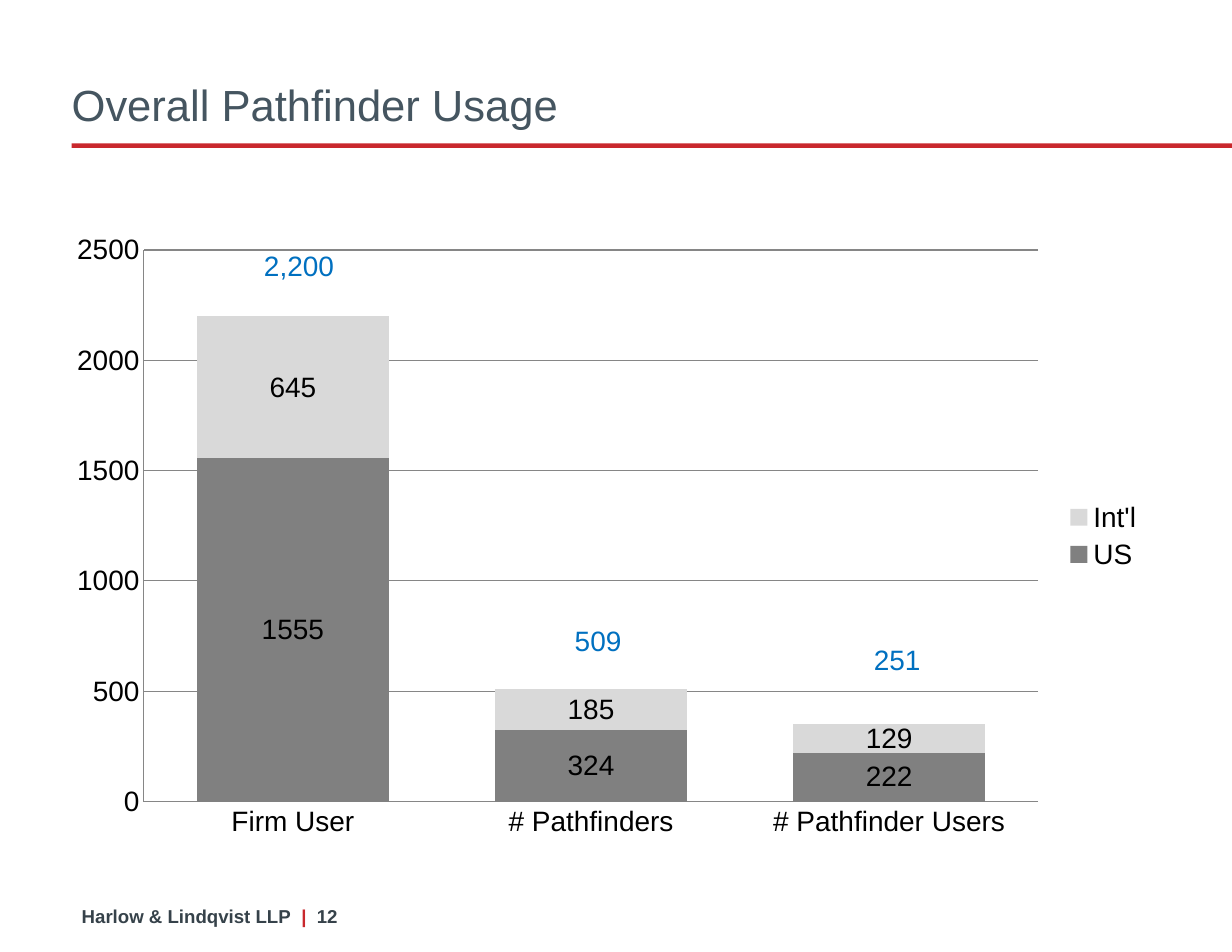
import pptx
import pptx.chart.data
import pptx.dml.color
import pptx.enum.chart
import pptx.enum.shapes
import pptx.enum.text
import pptx.util
from lxml import etree

# Content
TITLE = "Overall Pathfinder Usage"
FOOTER = [("Harlow & Lindqvist LLP  ", "footer"), ("|  ", "accent"), ("12", "footer")]
CATEGORIES = ["Firm User", "# Pathfinders", "# Pathfinder Users"]
SERIES = [("US", (1555, 324, 222), "us"), ("Int'l", (645, 185, 129), "intl")]
TOTALS = [("2,200", 2.17), ("509", 5.52), ("251", 5.69)]  # label, top

# Theme and grid
THEME = {
    "font": "Arial",
    "title": "455560", "footer": "36424A", "accent": "C9282D",
    "text": "000000", "total": "0070C0", "axis": "868686",
    "us": "808080", "intl": "D9D9D9",
    "title_size": 28, "chart_size": 18, "footer_size": 12,
}
WIDTH, HEIGHT = 11, 8.5
MARGIN = 0.64
CHART = (0.5, 1.98, 9.81, 5.61)
PLOT_SHARE = {"x": 0.08, "y": 0.045, "w": 0.814, "h": 0.878}
FIRST_COLUMN, COLUMN_PITCH = 2.67, 2.67
TOTAL_WIDTH, TOTAL_HEIGHT = 1.67, 0.34


def colour(key):
    return pptx.dml.color.RGBColor.from_string(THEME[key])


def inches(box):
    return [pptx.util.Inches(length) for length in box]


def style(font, size, key, bold=False):
    font.name = THEME["font"]
    font.size = pptx.util.Pt(THEME[size])
    font.color.rgb = colour(key)
    font.bold = bold


def add_text(slide, box, runs, size, bold=False, insets=(0.1, 0.05, 0.1, 0.05),
             align=pptx.enum.text.PP_ALIGN.LEFT,
             anchor=pptx.enum.text.MSO_ANCHOR.TOP):
    frame = slide.shapes.add_textbox(*inches(box)).text_frame
    frame.word_wrap = True
    frame.vertical_anchor = anchor
    (frame.margin_left, frame.margin_top,
     frame.margin_right, frame.margin_bottom) = inches(insets)
    paragraph = frame.paragraphs[0]
    paragraph.alignment = align
    for words, key in runs:
        run = paragraph.add_run()
        run.text = words
        style(run.font, size, key, bold)


def place_plot(chart):
    """Fix the inner plot area as shares of the chart frame."""
    plot_area = chart.plots[0]._element.getparent()
    namespace = etree.QName(plot_area).namespace
    tag = "{%s}" % namespace
    for old in plot_area.findall(tag + "layout"):
        plot_area.remove(old)
    layout = etree.Element(tag + "layout")
    manual = etree.SubElement(layout, tag + "manualLayout")
    settings = {"layoutTarget": "inner", "xMode": "edge", "yMode": "edge", **PLOT_SHARE}
    for name, value in settings.items():
        etree.SubElement(manual, tag + name, val=str(value))
    plot_area.insert(0, layout)


def add_usage_chart(slide):
    data = pptx.chart.data.CategoryChartData()
    data.categories = CATEGORIES
    for name, values, _ in SERIES:
        data.add_series(name, values)
    chart = slide.shapes.add_chart(
        pptx.enum.chart.XL_CHART_TYPE.COLUMN_STACKED, *inches(CHART), data).chart
    style(chart.font, "chart_size", "text")
    chart.has_title = False
    chart.has_legend = True
    chart.legend.position = pptx.enum.chart.XL_LEGEND_POSITION.RIGHT
    chart.legend.include_in_layout = False

    # Axes
    value_axis, category_axis = chart.value_axis, chart.category_axis
    value_axis.minimum_scale, value_axis.maximum_scale = 0, 2500
    value_axis.major_unit = 500
    value_axis.has_major_gridlines = True
    for axis in (value_axis, category_axis):
        axis.major_tick_mark = pptx.enum.chart.XL_TICK_MARK.NONE
    for part in (value_axis, category_axis, value_axis.major_gridlines):
        part.format.line.color.rgb = colour("axis")
        part.format.line.width = pptx.util.Pt(0.75)

    # Stacked columns
    plot = chart.plots[0]
    plot.gap_width, plot.overlap = 55, 100
    plot.vary_by_categories = False
    for series, (_, _, key) in zip(plot.series, SERIES):
        series.format.fill.solid()
        series.format.fill.fore_color.rgb = colour(key)
        labels = series.data_labels
        labels.show_value = True
        labels.position = pptx.enum.chart.XL_LABEL_POSITION.CENTER
        style(labels.font, "chart_size", "text")
    place_plot(chart)


def main():
    deck = pptx.Presentation()
    deck.slide_width, deck.slide_height = inches((WIDTH, HEIGHT))
    slide = deck.slides.add_slide(deck.slide_layouts[6])

    # Footer
    add_text(slide, (0.62, 8.02, 2.9, 0.31), FOOTER, "footer_size", bold=True,
             insets=(0.11, 0.06, 0.11, 0.06))

    # Title and its rule
    title_rule = slide.shapes.add_shape(
        pptx.enum.shapes.MSO_SHAPE.RECTANGLE,
        *inches((MARGIN, 1.28, WIDTH - MARGIN, 0.04)))
    title_rule.shadow.inherit = False
    title_rule.fill.solid()
    title_rule.fill.fore_color.rgb = colour("accent")
    title_rule.line.fill.background()
    add_text(slide, (MARGIN, 0.2, 10.08, 1.02), [(TITLE, "title")], "title_size",
             insets=(0, 0.06, 0.11, 0.06), anchor=pptx.enum.text.MSO_ANCHOR.BOTTOM)

    # Chart with a total above each column
    add_usage_chart(slide)
    for column, (total, top) in enumerate(TOTALS):
        left = FIRST_COLUMN + column * COLUMN_PITCH - TOTAL_WIDTH / 2
        add_text(slide, (left, top, TOTAL_WIDTH, TOTAL_HEIGHT), [(total, "total")],
                 "chart_size", align=pptx.enum.text.PP_ALIGN.CENTER)

    deck.save("out.pptx")


if __name__ == "__main__":
    main()
